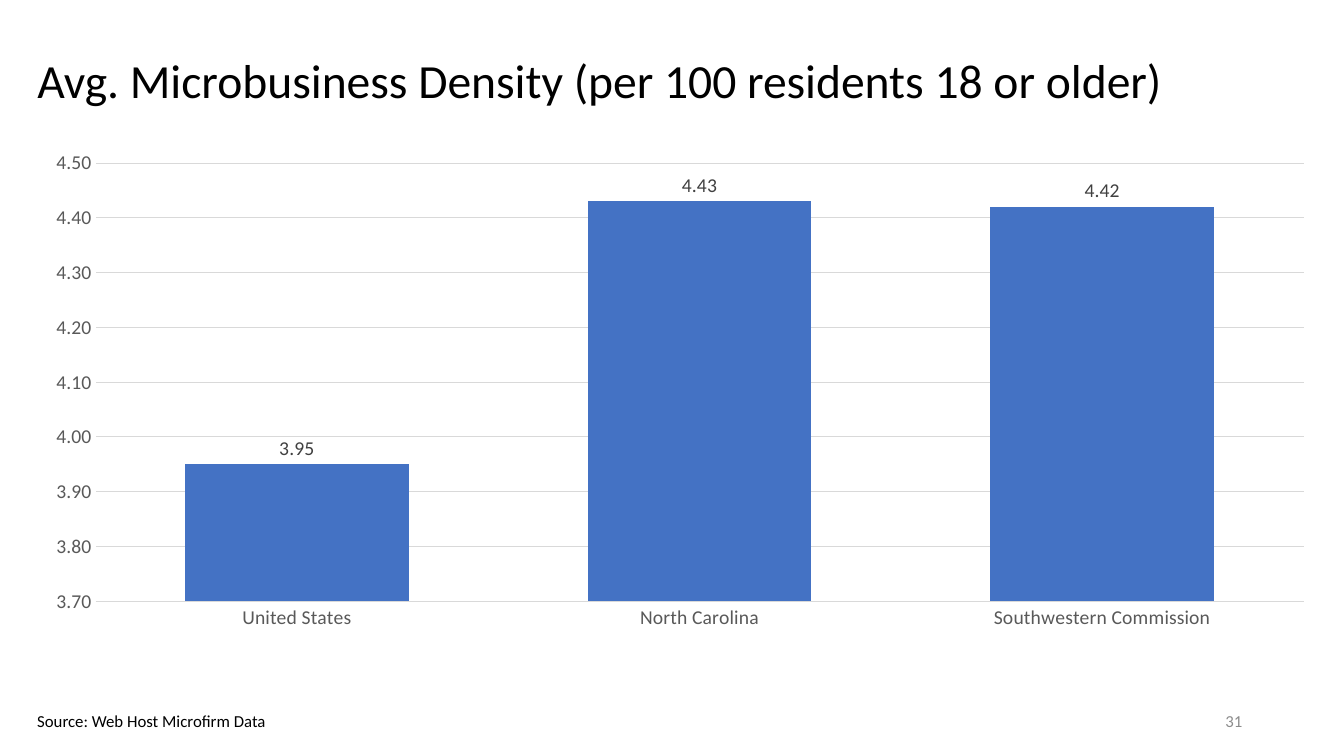
import pptx
import pptx.chart.data
import pptx.dml.color
import pptx.enum.chart
import pptx.enum.text
import pptx.oxml
import pptx.oxml.ns
import pptx.util

WIDE, HIGH = 13.33, 7.5
LEFT = 0.02
FONT = "Calibri"
HUES = {
    "ink": "000000",
    "label": "404040",
    "axis": "595959",
    "page": "8C8C8C",
    "grid": "D9D9D9",
    "bar": "4472C4",
}
DENSITY = {
    "United States": 3.95,
    "North Carolina": 4.43,
    "Southwestern Commission": 4.42,
}
PLOT = {"x": 0.053, "y": 0.035, "w": 0.936, "h": 0.805}


def hue(name):
    return pptx.dml.color.RGBColor.from_string(HUES[name])


def area(left, top, wide, high):
    return [
        pptx.util.Inches(round(share * size, 2))
        for share, size in zip((left, top, wide, high), (WIDE, HIGH) * 2)
    ]


def style(font, size, color):
    font.name = FONT
    font.size = pptx.util.Pt(size)
    font.bold = False
    font.color.rgb = hue(color)


def write(shape, text, size=12, color="ink", align="LEFT", anchor="MIDDLE",
          wrap=True, space=1.0):
    frame = shape.text_frame
    frame.word_wrap = wrap
    frame.vertical_anchor = pptx.enum.text.MSO_ANCHOR[anchor]
    frame.text = text
    line = frame.paragraphs[0]
    line.alignment = pptx.enum.text.PP_ALIGN[align]
    line.line_spacing = space
    style(line.runs[0].font, size, color)


def add_title(slide, box, text):
    title = slide.shapes.title
    title.left, title.top, title.width, title.height = box
    write(title, text, size=34, space=0.9)


def add_note(slide, box, text, **form):
    write(slide.shapes.add_textbox(*box), text, **form)


def set_axis(axis):
    none = pptx.enum.chart.XL_TICK_MARK.NONE
    axis.major_tick_mark = axis.minor_tick_mark = none
    style(axis.tick_labels.font, 14, "axis")


def set_line(line):
    line.color.rgb = hue("grid")
    line.width = pptx.util.Pt(0.75)


def set_plot(chart):
    modes = '<c:xMode val="edge"/><c:yMode val="edge"/>'
    sides = "".join(f'<c:{key} val="{share}"/>' for key, share in PLOT.items())
    space = pptx.oxml.ns.nsdecls("c")
    layout = pptx.oxml.parse_xml(
        f'<c:layout {space}><c:manualLayout><c:layoutTarget val="inner"/>'
        f"{modes}{sides}</c:manualLayout></c:layout>"
    )
    plot = chart.plots[0]._element.getparent()
    for old in plot.findall(pptx.oxml.ns.qn("c:layout")):
        plot.remove(old)
    plot.insert(0, layout)


def add_bars(slide, box, values):
    data = pptx.chart.data.CategoryChartData(number_format="0.00")
    data.categories = list(values)
    data.add_series("Series 1", list(values.values()))
    kind = pptx.enum.chart.XL_CHART_TYPE.COLUMN_CLUSTERED
    chart = slide.shapes.add_chart(kind, *box, data).chart
    chart.has_title = chart.has_legend = False
    style(chart.font, 14, "ink")

    set_axis(chart.category_axis)
    set_line(chart.category_axis.format.line)
    scale = chart.value_axis
    set_axis(scale)
    scale.format.line.fill.background()
    set_line(scale.major_gridlines.format.line)
    scale.minimum_scale, scale.maximum_scale = 3.7, 4.5
    scale.major_unit = 0.1
    scale.tick_labels.number_format = "0.00"
    scale.tick_labels.number_format_is_linked = False

    plot = chart.plots[0]
    plot.gap_width = 80
    plot.vary_by_categories = False
    series = plot.series[0]
    series.format.fill.solid()
    series.format.fill.fore_color.rgb = hue("bar")
    labels = series.data_labels
    labels.show_value = True
    labels.number_format = "0.00"
    labels.number_format_is_linked = False
    labels.position = pptx.enum.chart.XL_LABEL_POSITION.OUTSIDE_END
    style(labels.font, 14, "label")
    set_plot(chart)


def main():
    deck = pptx.Presentation()
    deck.slide_width = pptx.util.Inches(WIDE)
    deck.slide_height = pptx.util.Inches(HIGH)
    slide = deck.slides.add_slide(deck.slide_layouts.get_by_name("Title Only"))
    add_title(slide, area(LEFT, 0.027, 0.957, 0.165),
              "Avg. Microbusiness Density (per 100 residents 18 or older)")
    add_bars(slide, area(LEFT, 0.191, 0.96, 0.72), DENSITY)
    add_note(slide, area(LEFT, 0.933, 0.199, 0.04),
             "Source: Web Host Microfirm Data", anchor="TOP", wrap=False)
    add_note(slide, area(0.707, 0.927, 0.225, 0.053), "31",
             color="page", align="RIGHT")
    deck.save("out.pptx")


if __name__ == "__main__":
    main()
